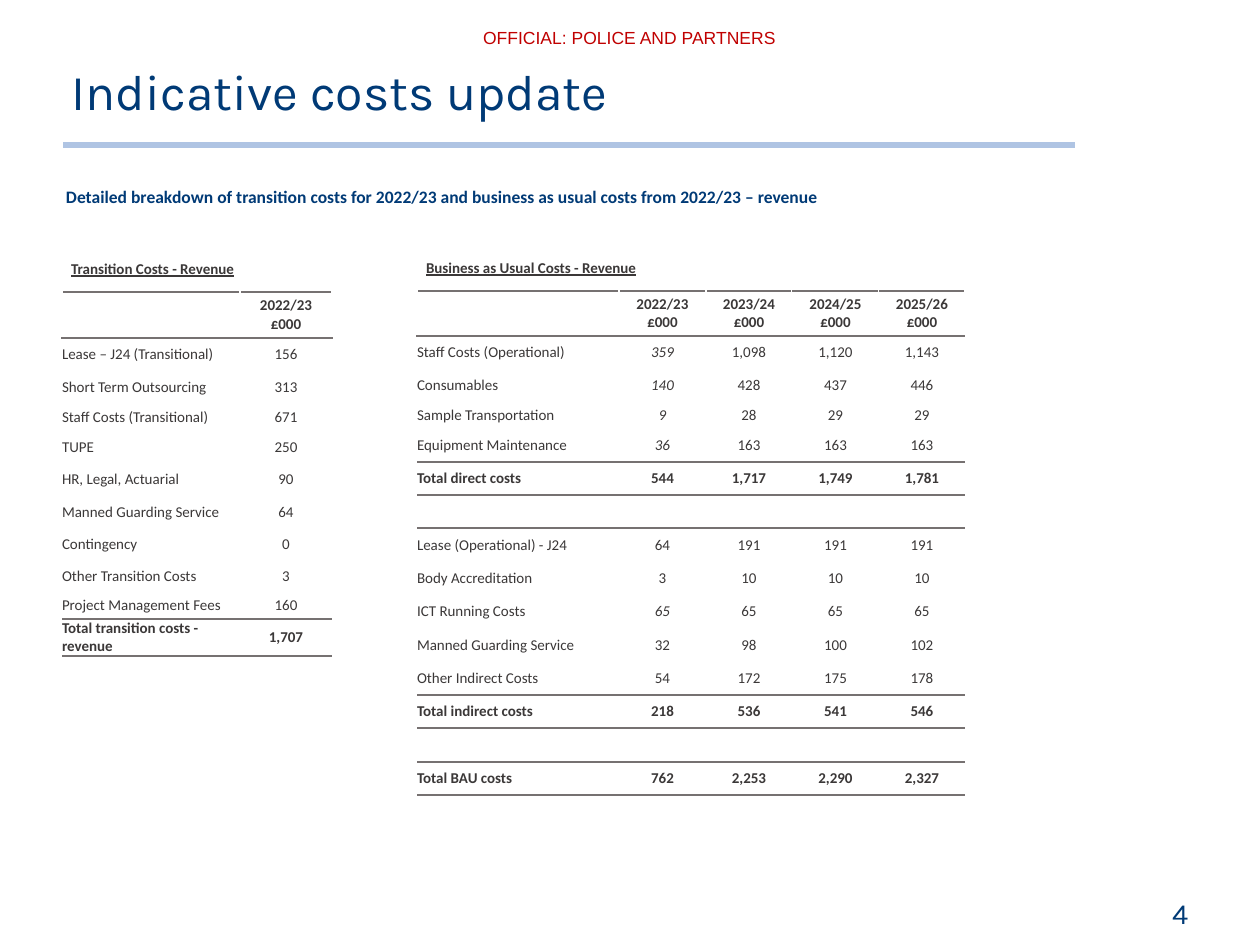
from lxml import etree
from pptx import Presentation
from pptx.dml.color import RGBColor
from pptx.enum.shapes import MSO_CONNECTOR
from pptx.enum.text import MSO_ANCHOR, PP_ALIGN
from pptx.oxml.ns import qn
from pptx.util import Pt

PX = 914400 // 90  # EMU in one px
LEFT, CENTER, RIGHT = PP_ALIGN.LEFT, PP_ALIGN.CENTER, PP_ALIGN.RIGHT
MIDDLE = MSO_ANCHOR.MIDDLE
STRAIGHT = MSO_CONNECTOR.STRAIGHT
NO_STYLE_NO_GRID = "{2D5ABB26-0587-4C30-8999-92F81FD0307C}"
COLORS = {"navy": "003A76", "red": "C00000", "bar": "9CB6DC",
          "ink": "3B3838", "rule": "767171", "white": "FFFFFF"}

TRANSITION_COSTS = [
    ("Lease – J24 (Transitional)", "156"),
    ("Short Term Outsourcing", "313"),
    ("Staff Costs (Transitional)", "671"),
    ("TUPE", "250"),
    ("HR, Legal, Actuarial", "90"),
    ("Manned Guarding Service", "64"),
    ("Contingency", "0"),
    ("Other Transition Costs", "3"),
    ("Project Management Fees", "160"),
    ("Total transition costs - revenue", "1,707"),
]
USUAL_COSTS = [
    ("Staff Costs (Operational)", "359", "1,098", "1,120", "1,143"),
    ("Consumables", "140", "428", "437", "446"),
    ("Sample Transportation", "9", "28", "29", "29"),
    ("Equipment Maintenance", "36", "163", "163", "163"),
    ("Total direct costs", "544", "1,717", "1,749", "1,781"),
    ("",) * 5,
    ("Lease (Operational) - J24", "64", "191", "191", "191"),
    ("Body Accreditation", "3", "10", "10", "10"),
    ("ICT Running Costs", "65", "65", "65", "65"),
    ("Manned Guarding Service", "32", "98", "100", "102"),
    ("Other Indirect Costs", "54", "172", "175", "178"),
    ("Total indirect costs", "218", "536", "541", "546"),
    ("",) * 5,
    ("Total BAU costs", "762", "2,253", "2,290", "2,327"),
]
# Lines whose first-year figure is in italics
PART_YEAR = {"Staff Costs (Operational)", "Consumables", "Sample Transportation",
             "Equipment Maintenance", "ICT Running Costs"}


def write(frame, text, font="Calibri", size=12, color="ink", bold=False, italic=False,
          underline=False, align=LEFT, spacing=None):
    """Put text in a frame, one paragraph for each line."""
    for number, line in enumerate(text.split("\n")):
        paragraph = frame.paragraphs[0] if number == 0 else frame.add_paragraph()
        paragraph.alignment = align
        if spacing:
            paragraph.line_spacing = spacing
        run = paragraph.add_run()
        run.text = line
        run.font.name, run.font.size = font, Pt(size)
        run.font.bold, run.font.italic, run.font.underline = bold, italic, underline
        run.font.color.rgb = RGBColor.from_string(COLORS[color])


class CostSlide:
    def __init__(self, presentation):
        self.slide = presentation.slides.add_slide(presentation.slide_layouts[6])

    def text(self, x, y, width, height, text, wrap=True, inset=9, **style):
        box = self.slide.shapes.add_textbox(x * PX, y * PX, width * PX, height * PX)
        frame = box.text_frame
        frame.word_wrap = wrap
        frame.margin_left = frame.margin_right = inset * PX
        write(frame, text, **style)

    def bar(self, x1, x2, y, color, weight, opacity):
        bar = self.slide.shapes.add_connector(STRAIGHT, x1 * PX, y * PX, x2 * PX, y * PX)
        bar.line.color.rgb = RGBColor.from_string(COLORS[color])
        bar.line.width = Pt(weight)
        shade = bar.line._ln.find(".//" + qn("a:srgbClr"))
        etree.SubElement(shade, qn("a:alpha"), val=str(opacity * 1000))
        etree.SubElement(bar._element.spPr, qn("a:effectLst"))

    def border(self, cell, side, color, weight):
        edge = etree.SubElement(cell._tc.get_or_add_tcPr(), qn("a:ln" + side),
                                w=str(Pt(weight)))
        fill = etree.SubElement(edge, qn("a:solidFill"))
        etree.SubElement(fill, qn("a:srgbClr"), val=COLORS[color])

    def cost_table(self, x, y, title, years, costs, widths, heights):
        headings = [""] + [year + "\n£000" for year in years]
        rows = [[title] + [""] * len(years), headings, *costs]
        table = self.slide.shapes.add_table(
            len(rows), len(widths), x * PX, y * PX,
            sum(widths) * PX, sum(heights) * PX).table
        table.first_row = table.horz_banding = False
        table._tbl.tblPr.find(qn("a:tableStyleId")).text = NO_STYLE_NO_GRID
        for column, width in zip(table.columns, widths):
            column.width = width * PX
        for row, height in zip(table.rows, heights):
            row.height = height * PX

        # Header, spacer and total rows have a rule above and below
        ruled = [not row[0] or row[0].startswith("Total") for row in rows]
        for r, row in enumerate(rows):
            total = row[0].startswith("Total")
            for c, value in enumerate(row):
                cell = table.cell(r, c)
                cell.margin_left = cell.margin_right = 0
                cell.margin_top = cell.margin_bottom = 0
                cell.vertical_anchor = MIDDLE
                if r == 1:
                    self.border(cell, "L", "white", 1)
                    self.border(cell, "R", "white", 1)
                if ruled[r]:
                    self.border(cell, "T", "rule", 1.5)
                    self.border(cell, "B", "rule", 1.5)
                cell.fill.background()
                if value:
                    write(cell.text_frame, value, bold=r < 2 or total, underline=r == 0,
                          italic=c == 1 and row[0] in PART_YEAR,
                          align=CENTER if c else LEFT)
        heading = table.cell(0, 0)
        heading.merge(table.cell(0, 1))
        heading.margin_left = 9 * PX


def main():
    presentation = Presentation()
    presentation.slide_width, presentation.slide_height = 1260 * PX, 945 * PX
    page = CostSlide(presentation)

    # Marking, title and subtitle
    page.text(473, 23, 313, 31, "OFFICIAL: POLICE AND PARTNERS", wrap=False,
              font="Arial", size=14, color="red", align=CENTER)
    page.bar(63, 1075, 145, "bar", 4.5, 80)
    page.text(62, 182, 1135, 64,
              "Detailed breakdown of transition costs for 2022/23 and business as usual "
              "costs from 2022/23 – revenue",
              inset=4, size=14, color="navy", bold=True)
    page.text(63, 52, 1102, 105, "Indicative costs update",
              font="Karla", size=40, color="navy", spacing=1.06)

    # Page number
    page.text(903, 891, 294, 35, "4", font="Karla", size=23.1, color="navy", align=RIGHT)

    # Cost tables
    page.cost_table(62, 247, "Transition Costs - Revenue", ["2022/23"], TRANSITION_COSTS,
                    widths=[178, 92],
                    heights=[45, 46, 33, 32, 28, 32, 33, 32, 32, 32, 27, 37])
    page.cost_table(417, 246, "Business as Usual Costs - Revenue",
                    ["2022/23", "2023/24", "2024/25", "2025/26"], USUAL_COSTS,
                    widths=[202] + [87, 86] * 2,
                    heights=[45, 45, 33, 32, 28, 33, 33] + [33, 34, 33] * 3)

    presentation.save("out.pptx")


if __name__ == "__main__":
    main()
